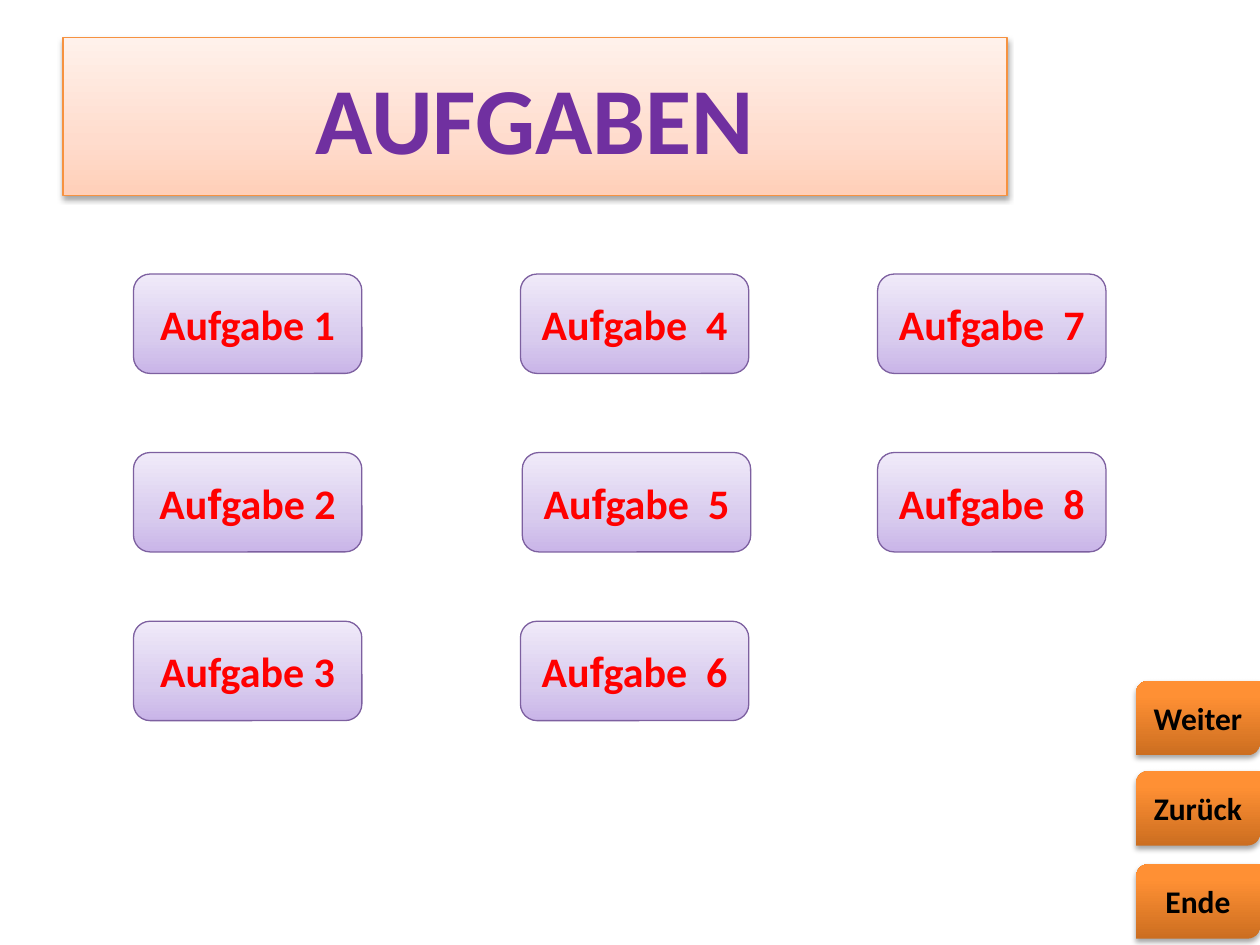
from lxml.etree import SubElement
from pptx import Presentation
from pptx.dml.color import RGBColor
from pptx.enum.shapes import MSO_SHAPE
from pptx.enum.text import MSO_ANCHOR, PP_ALIGN
from pptx.oxml.ns import qn
from pptx.util import Pt

TITLE = "AUFGABEN"
# Each task: runs of (text, font), by column from top to bottom
TASK_COLUMNS = [
    [
        [("Aufgabe 1", "Calibri")],
        [("Au", "Calibri"), ("f", "Arial"), ("gabe 2", "Calibri")],
        [("Aufgabe 3", "Calibri")],
    ],
    *[
        [[("Au", "Calibri"), ("f", "Arial"), (f"gabe  {number}", "Calibri")] for number in numbers]
        for numbers in ((4, 5, 6), (7, 8))
    ],
]
COLUMN_LEFTS = [76.3, 297.4, 501.5]
ROW_TOPS = [156.6, 258.6, 355]
TASK_SIZE = (130.5, 56.8)
NUDGES = {(1, 1): 1.1}  # the middle button sits slightly to the right

NAVIGATION = [("Weiter", 389), ("Zurück", 440.6), ("Ende", 493.8)]
NAVIGATION_LEFT, NAVIGATION_SIZE = 649.2, (70.8, 42.6)

# Gradient stops run from bottom to top
TITLE_STOPS = [(0, "FFCFB8"), (35, "FFDCCD"), (100, "FFF1EB")]
TASK_STOPS = [(0, "C9B5E8"), (35, "D8CBEE"), (100, "F0EAF9")]
NAVIGATION_STOPS = [(0, "CC6E20"), (80, "FF9034"), (100, "FF9136")]


def color(value):
    return RGBColor.from_string(value)


def fill_gradient(shape, stops):
    shape.fill.gradient()
    shape.fill.gradient_angle = 90
    stop_list = shape.element.spPr.find(".//" + qn("a:gsLst"))
    stop_list.clear()
    for percent, value in stops:
        stop = SubElement(stop_list, qn("a:gs"), pos=str(percent * 1000))
        SubElement(stop, qn("a:srgbClr"), val=value)


def add_shadow(shape):
    effects = shape.element.spPr.find(qn("a:effectLst"))
    shadow = SubElement(effects, qn("a:outerShdw"), blurRad=str(Pt(3.1)), dist=str(Pt(1.8)),
                        dir="5400000", rotWithShape="0")
    tint = SubElement(shadow, qn("a:srgbClr"), val="000000")
    SubElement(tint, qn("a:alpha"), val="35000")


def add_button(page, kind, left, top, size, stops, runs, points, text_color, line=None, shadow=False):
    shape = page.shapes.add_shape(kind, Pt(left), Pt(top), *map(Pt, size))
    shape.shadow.inherit = False
    fill_gradient(shape, stops)
    if line:
        shape.line.color.rgb = color(line)
        shape.line.width = Pt(0.75)
    else:
        shape.line.fill.background()
    if shadow:
        add_shadow(shape)
    frame = shape.text_frame
    frame.word_wrap = True
    frame.vertical_anchor = MSO_ANCHOR.MIDDLE
    para = frame.paragraphs[0]
    para.alignment = PP_ALIGN.CENTER
    para.font.size = Pt(points)
    para.font.bold = True
    para.font.color.rgb = color(text_color)
    for text, font in runs:
        span = para.add_run()
        span.text = text
        span.font.name = font


def main():
    deck = Presentation()
    deck.slide_width, deck.slide_height = Pt(720), Pt(540)
    page = deck.slides.add_slide(deck.slide_layouts[6])

    for label, top in reversed(NAVIGATION):
        add_button(page, MSO_SHAPE.ROUND_2_DIAG_RECTANGLE, NAVIGATION_LEFT, top, NAVIGATION_SIZE,
                   NAVIGATION_STOPS, [(label, "Calibri")], 18, "000000", shadow=True)
    add_button(page, MSO_SHAPE.RECTANGLE, 36, 21.6, (539.5, 90), TITLE_STOPS,
               [(TITLE, "Calibri")], 54, "7030A0", line="F69240", shadow=True)
    for column, (left, tasks) in enumerate(zip(COLUMN_LEFTS, TASK_COLUMNS)):
        for row, (top, runs) in enumerate(zip(ROW_TOPS, tasks)):
            add_button(page, MSO_SHAPE.ROUNDED_RECTANGLE, left + NUDGES.get((column, row), 0), top,
                       TASK_SIZE, TASK_STOPS, runs, 24, "FF0000", line="7D60A0")

    deck.save("out.pptx")


if __name__ == "__main__":
    main()
